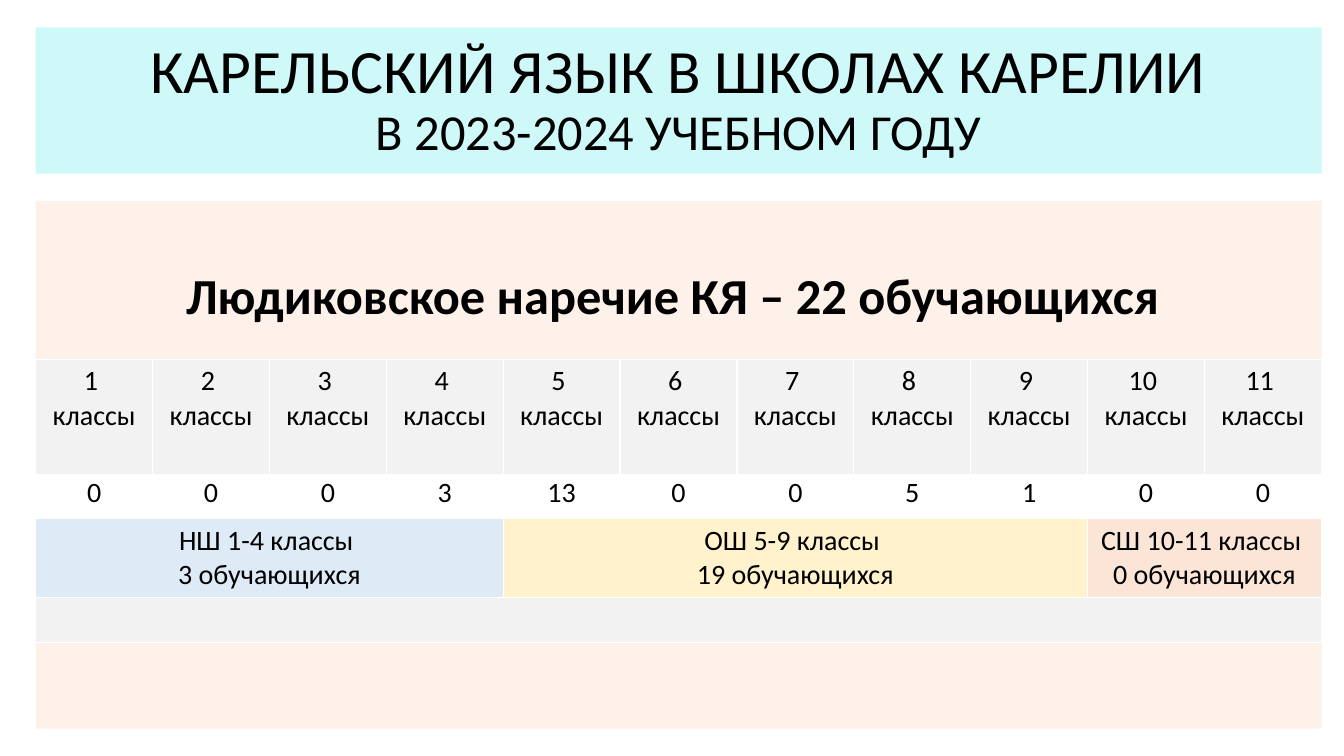
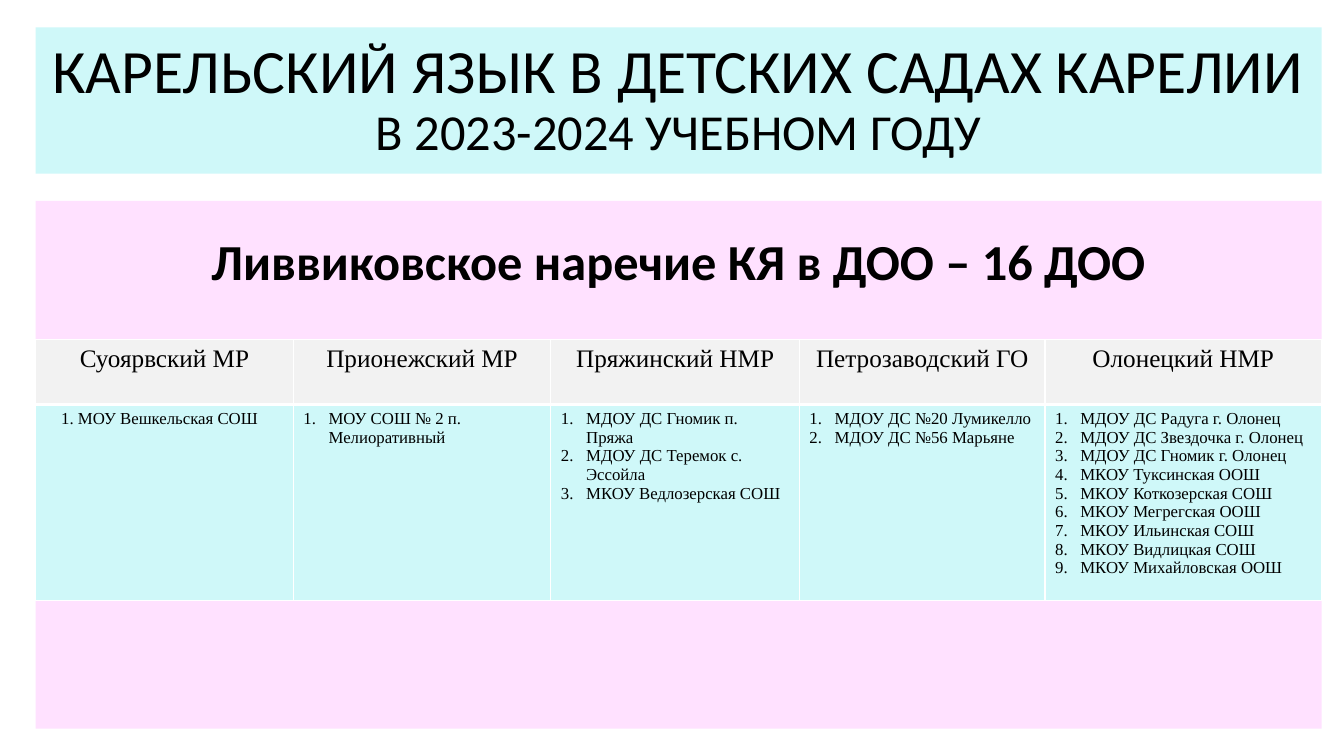
import pptx
import pptx.dml.color
import pptx.enum.shapes
import pptx.enum.text
import pptx.oxml
import pptx.oxml.ns
import pptx.util
from pptx.util import Pt

BLACK, WHITE = "000000", "FFFFFF"
AQUA, PEACH, PINK, GREY = "CFF8F9", "FDF1E9", "FFE1FF", "F2F2F2"
BLUE, YELLOW, ORANGE = "DEEBF7", "FFF2CC", "FBE5D6"
LEFT, WIDTH = 25.5, 918.5
CENTER = pptx.enum.text.PP_ALIGN.CENTER
MIDDLE, TOP = pptx.enum.text.MSO_ANCHOR.MIDDLE, pptx.enum.text.MSO_ANCHOR.TOP

presentation = pptx.Presentation()
presentation.slide_width, presentation.slide_height = Pt(960), Pt(540)


def paint(target, color):
    """Give a shape, cell or font a solid fill."""
    target.fill.solid()
    target.fill.fore_color.rgb = pptx.dml.color.RGBColor.from_string(color)


def fill_cell(cell, lines, color, font_name, size, bottom_border=1, hanging=None):
    """Write lines into a cell; hanging = (indent, number width) numbers them."""
    paint(cell, color)
    borders = {"lnL": 1, "lnR": 1, "lnT": 1, "lnB": bottom_border}
    for position, (side, width) in enumerate(borders.items()):
        border = pptx.oxml.parse_xml(
            f'<a:{side} {pptx.oxml.ns.nsdecls("a")} w="{Pt(width)}"><a:solidFill>'
            f'<a:srgbClr val="{WHITE}"/></a:solidFill></a:{side}>')
        cell._tc.get_or_add_tcPr().insert(position, border)
    cell.text = "\n".join(lines)
    for paragraph in cell.text_frame.paragraphs:
        paragraph.font.name = font_name
        paragraph.font.size = Pt(size)
        paragraph.font.bold = False
        paint(paragraph.font, BLACK)
        if hanging:
            indent, number_width = hanging
            properties = paragraph._p.get_or_add_pPr()
            properties.set("marL", str(Pt(indent)))
            properties.set("indent", str(Pt(-number_width)))
            properties.insert(0, pptx.oxml.parse_xml(
                f'<a:buAutoNum {pptx.oxml.ns.nsdecls("a")} type="arabicPeriod"/>'))
        else:
            paragraph.alignment = CENTER


# Bands shared by both slides, each with its table grid
pages = [
    ("КАРЕЛЬСКИЙ ЯЗЫК В ШКОЛАХ КАРЕЛИИ",
     "Людиковское наречие КЯ – 22 обучающихся ", PEACH, 45,
     256.5, [WIDTH / 11] * 11, [83.5, 30.5, 56.5, 31]),
    ("КАРЕЛЬСКИЙ ЯЗЫК В ДЕТСКИХ САДАХ КАРЕЛИИ",
     "Ливвиковское наречие КЯ в ДОО – 16 ДОО", PINK, 21,
     242.5, [184, 184, 177.5, 175.5, 197.5], [46.5, 140]),
]
tables = []
for title, heading, body_color, heading_inset, table_top, columns, rows in pages:
    slide = presentation.slides.add_slide(presentation.slide_layouts[6])
    bands = []
    for top, height, color, anchor in [(19.5, 104.5, AQUA, MIDDLE),
                                       (143.5, 377, body_color, TOP)]:
        band = slide.shapes.add_shape(
            pptx.enum.shapes.MSO_SHAPE.RECTANGLE, Pt(LEFT), Pt(top), Pt(WIDTH), Pt(height))
        band.shadow.inherit = False
        band.line.fill.background()
        paint(band, color)
        band.text_frame.word_wrap = True
        band.text_frame.vertical_anchor = anchor
        paragraph = band.text_frame.paragraphs[0]
        paragraph.alignment = CENTER
        paragraph.font.name = "Calibri"
        paint(paragraph.font, BLACK)
        bands.append(band)

    title_band, body_band = bands
    paragraph = title_band.text_frame.paragraphs[0]
    paragraph.line_spacing = 0.9
    run = paragraph.add_run()
    run.text, run.font.size = title, Pt(44)
    paragraph.add_line_break()
    run = paragraph.add_run()
    run.text, run.font.size = "В 2023-2024 УЧЕБНОМ ГОДУ", Pt(36)

    body_band.text_frame.margin_top = Pt(heading_inset)
    paragraph = body_band.text_frame.paragraphs[0]
    paragraph.font.size, paragraph.font.bold = Pt(36), True
    paragraph.add_run().text = heading

    table = slide.shapes.add_table(
        len(rows), len(columns), Pt(LEFT), Pt(table_top), Pt(WIDTH), Pt(sum(rows))).table
    table.horz_banding = False
    for column, width in zip(table.columns, columns):
        column.width = Pt(width)
    for row, height in zip(table.rows, rows):
        row.height = Pt(height)
    tables.append(table)

school_table, kindergarten_table = tables

# Slide 1: pupils by grade and by school level
for index, pupils in enumerate([0, 0, 0, 3, 13, 0, 0, 5, 1, 0, 0]):
    fill_cell(school_table.cell(0, index), [f"{index + 1} ", "классы"],
              GREY, "Calibri", 20, bottom_border=3)
    count_cell = school_table.cell(1, index)
    fill_cell(count_cell, [str(pupils)], WHITE, "Calibri", 20)
    count_cell.margin_left = count_cell.margin_right = Pt(5)
    count_cell.margin_top = count_cell.margin_bottom = 0

for row, first, last, lines, color in [
    (2, 0, 3, ["НШ 1-4 классы ", "3 обучающихся"], BLUE),
    (2, 4, 8, ["ОШ 5-9 классы ", "19 обучающихся"], YELLOW),
    (2, 9, 10, ["СШ 10-11 классы ", "0 обучающихся"], ORANGE),
    (3, 0, 10, [], GREY),
]:
    level_cell = school_table.cell(row, first)
    level_cell.merge(school_table.cell(row, last))
    fill_cell(level_cell, lines, color, "Calibri", 20)

# Slide 2: kindergartens by district
districts = {
    "Суоярвский МР": ["МОУ Вешкельская СОШ"],
    "Прионежский МР": ["МОУ СОШ № 2 п. Мелиоративный"],
    "Пряжинский НМР": ["МДОУ ДС Гномик п. Пряжа", "МДОУ ДС Теремок с. Эссойла",
                       "МКОУ Ведлозерская СОШ"],
    "Петрозаводский ГО": ["МДОУ ДС №20 Лумикелло", "МДОУ ДС №56 Марьяне"],
    "Олонецкий НМР": ["МДОУ ДС Радуга г. Олонец", "МДОУ ДС Звездочка г. Олонец",
                      "МДОУ ДС Гномик г. Олонец", "МКОУ Туксинская ООШ",
                      "МКОУ Коткозерская СОШ", "МКОУ Мегрегская ООШ",
                      "МКОУ Ильинская СОШ", "МКОУ Видлицкая СОШ",
                      "МКОУ Михайловская ООШ"],
}
for index, (district, kindergartens) in enumerate(districts.items()):
    fill_cell(kindergarten_table.cell(0, index), [district], GREY,
              "Times New Roman", 18, bottom_border=3)
    fill_cell(kindergarten_table.cell(1, index), kindergartens, AQUA,
              "Times New Roman", 12, hanging=(23, 12) if index == 0 else (18, 18))

presentation.save("out.pptx")
